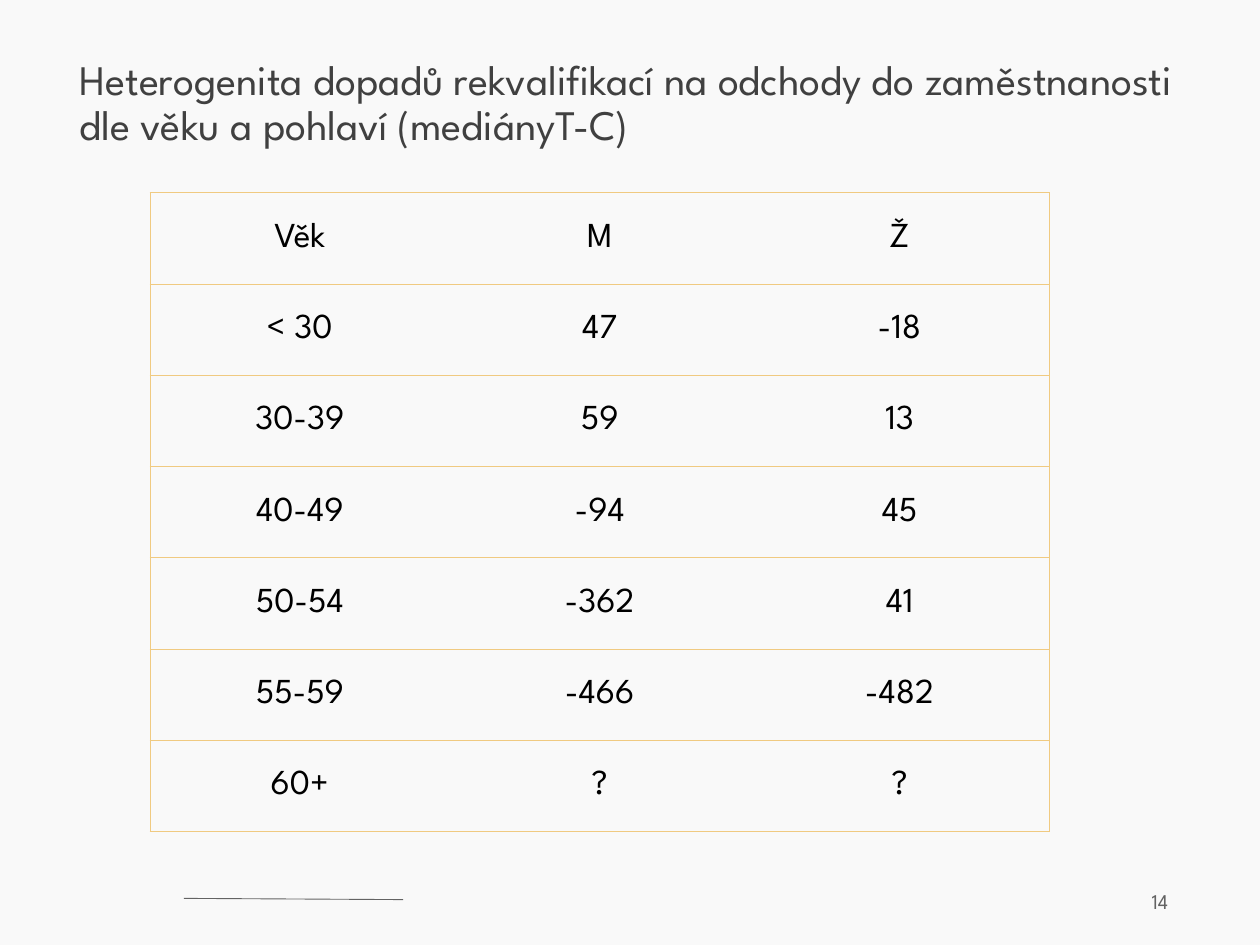
from lxml.etree import SubElement
from pptx import Presentation
from pptx.dml.color import RGBColor
from pptx.enum.shapes import MSO_CONNECTOR as Conn
from pptx.enum.text import MSO_ANCHOR as Anchor, PP_ALIGN as Align
from pptx.oxml.ns import qn
from pptx.util import Inches, Pt

FONT = "League Spartan"
GOLD = "F0CA81"
GREY = "636363"
TITLE = "Heterogenita dopadů rekvalifikací na odchody do zaměstnanosti dle věku a pohlaví (mediányT-C)"
ROWS = [
    ("Věk", "M", "Ž"),
    ("< 30", "47", "-18"),
    ("30-39", "59", "13"),
    ("40-49", "-94", "45"),
    ("50-54", "-362", "41"),
    ("55-59", "-466", "-482"),
    ("60+", "?", "?"),
]


def rgb(value):
    return RGBColor.from_string(value)


def write(p, text, size, color, align):
    p.alignment = align
    r = p.add_run()
    r.text = text
    r.font.name = FONT
    r.font.size = Pt(size)
    r.font.bold = False
    r.font.color.rgb = rgb(color)


def set_margins(obj, left, top, right, bottom):
    obj.margin_left, obj.margin_top = Inches(left), Inches(top)
    obj.margin_right, obj.margin_bottom = Inches(right), Inches(bottom)


def add_title(s):
    sp = s.shapes.title
    sp.left, sp.top = Inches(0.63), Inches(0.47)
    sp.width, sp.height = Inches(8.74), Inches(0.84)
    tf = sp.text_frame
    tf.word_wrap = True
    tf.vertical_anchor = Anchor.TOP
    set_margins(tf, 0, 0, 0, 0)
    p = tf.paragraphs[0]
    p.line_spacing = 0.9
    p.space_before = Pt(0)
    write(p, TITLE, 24, "404040", Align.LEFT)


def set_borders(cell, visible):
    tc_pr = cell._tc.get_or_add_tcPr()
    for side in "LRTB":
        ln = SubElement(tc_pr, qn(f"a:ln{side}"), w=str(Pt(0.5)))
        if side in visible:
            fill = SubElement(ln, qn("a:solidFill"))
            SubElement(fill, qn("a:srgbClr"), val=GOLD)
        else:
            SubElement(ln, qn("a:noFill"))


def add_age_table(s):
    n_rows, n_cols = len(ROWS), len(ROWS[0])
    table = s.shapes.add_table(
        n_rows, n_cols, Inches(1.19), Inches(1.53), Inches(7.14), Inches(5.07)
    ).table
    table.first_row = False
    table.horz_banding = False
    for i, row in enumerate(ROWS):
        for j, text in enumerate(row):
            cell = table.cell(i, j)
            sides = "TB" + ("L" if j == 0 else "") + ("R" if j == n_cols - 1 else "")
            set_borders(cell, sides)
            cell.fill.background()
            cell.vertical_anchor = Anchor.MIDDLE
            set_margins(cell, 0.01, 0.01, 0.01, 0)
            write(cell.text_frame.paragraphs[0], text, 20, "000000", Align.CENTER)


def add_footer_line(s):
    line = s.shapes.add_connector(
        Conn.STRAIGHT, Inches(1.46), Inches(7.13), Inches(3.2), Inches(7.14)
    )
    line.line.color.rgb = rgb(GREY)
    line.line.width = Pt(0.5)
    SubElement(line._element.spPr, qn("a:effectLst"))


def add_page_number(s):
    sp = s.shapes.add_textbox(Inches(7.12), Inches(6.95), Inches(2.25), Inches(0.4))
    tf = sp.text_frame
    tf.word_wrap = True
    tf.vertical_anchor = Anchor.MIDDLE
    write(tf.paragraphs[0], "14", 12, GREY, Align.RIGHT)


def main():
    prs = Presentation()
    prs.slide_width, prs.slide_height = Inches(10), Inches(7.5)
    s = prs.slides.add_slide(prs.slide_layouts[5])
    s.background.fill.solid()
    s.background.fill.fore_color.rgb = rgb("F9F9F9")
    add_footer_line(s)
    add_page_number(s)
    add_title(s)
    add_age_table(s)
    prs.save("out.pptx")


if __name__ == "__main__":
    main()
